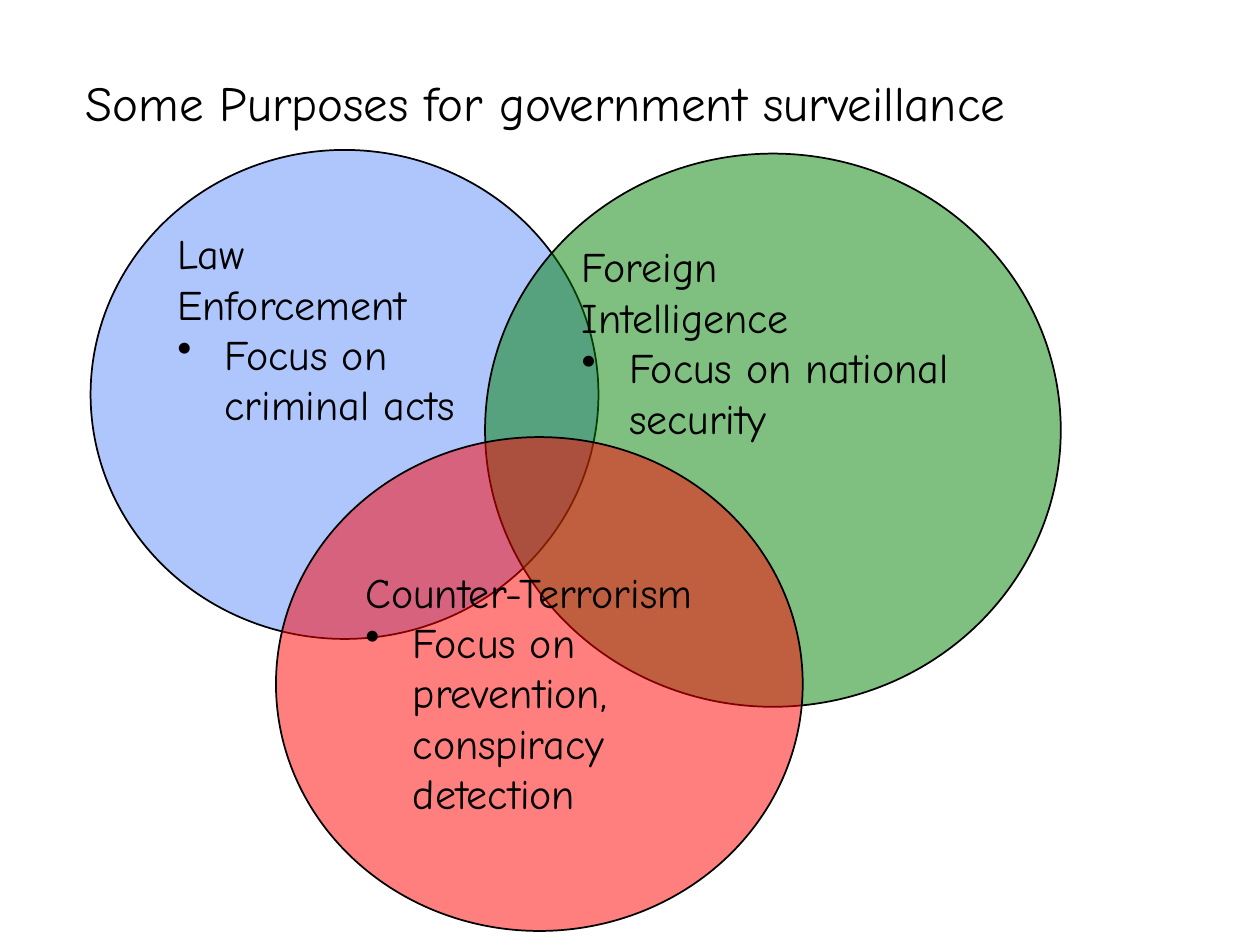
from dataclasses import dataclass

from lxml.etree import SubElement
from pptx import Presentation
from pptx.dml.color import RGBColor
from pptx.enum.shapes import MSO_SHAPE
from pptx.enum.text import MSO_ANCHOR, PP_ALIGN
from pptx.oxml.ns import qn
from pptx.slide import Slide
from pptx.text.text import _Paragraph
from pptx.util import Pt

BLACK = RGBColor(0x00, 0x00, 0x00)
BLUE = RGBColor(0x61, 0x8F, 0xFD)
GREEN = RGBColor(0x00, 0x80, 0x00)
RED = RGBColor(0xFF, 0x00, 0x00)
FONT = "Comic Neue"
BULLET_INDENT = Pt(27)


@dataclass
class Purpose:
    """One circle of the Venn diagram; lengths in points."""
    heading: list[str]
    focus: str
    color: RGBColor
    left: float
    top: float
    width: float
    height: float
    top_inset: float = 3.6


PURPOSES = [
    Purpose(["Law", "Enforcement"], "Focus on criminal acts",
            BLUE, 51.8, 85.7, 290.2, 279.4),
    Purpose(["Foreign", "Intelligence"], "Focus on national security",
            GREEN, 277.2, 87.8, 329, 316.1),
    Purpose(["Counter-Terrorism"], "Focus on prevention, conspiracy detection",
            RED, 157.7, 249.8, 301, 282.2, top_inset=32.4),
]


def style_text(paragraph: _Paragraph, size: float) -> None:
    paragraph.alignment = PP_ALIGN.LEFT
    paragraph.font.name = FONT
    paragraph.font.size = Pt(size)
    paragraph.font.color.rgb = BLACK


def add_bullet(paragraph: _Paragraph) -> None:
    properties = paragraph._p.get_or_add_pPr()
    properties.set("marL", str(BULLET_INDENT))
    properties.set("indent", str(-BULLET_INDENT))
    bullet = properties.makeelement(qn("a:buChar"), {"char": "•"})
    # The bullet has to come before the default run properties
    properties.find(qn("a:defRPr")).addprevious(bullet)


def add_purpose(slide: Slide, purpose: Purpose) -> None:
    circle = slide.shapes.add_shape(
        MSO_SHAPE.OVAL, Pt(purpose.left), Pt(purpose.top),
        Pt(purpose.width), Pt(purpose.height))
    circle.shadow.inherit = False
    circle.line.color.rgb = BLACK
    circle.line.width = Pt(1)

    # Half-transparent fill, so that the overlaps show
    circle.fill.solid()
    circle.fill.fore_color.rgb = purpose.color
    color = circle.fill._xPr.find(qn("a:solidFill")).find(qn("a:srgbClr"))
    SubElement(color, qn("a:alpha"), val="50000")

    # Heading lines, then the bulleted focus
    frame = circle.text_frame
    frame.word_wrap = True
    frame.vertical_anchor = MSO_ANCHOR.TOP
    frame.margin_top = Pt(purpose.top_inset)
    frame.text = "\n".join([*purpose.heading, purpose.focus])
    for paragraph in frame.paragraphs:
        style_text(paragraph, 24)
    add_bullet(frame.paragraphs[-1])


def add_title(slide: Slide, text: str) -> None:
    title = slide.shapes.title
    title.left, title.top = Pt(41.8), Pt(25.2)
    title.width, title.height = Pt(612), Pt(66.2)
    title.text_frame.text = text
    title.text_frame.vertical_anchor = MSO_ANCHOR.MIDDLE
    style_text(title.text_frame.paragraphs[0], 28)


def main() -> None:
    presentation = Presentation()
    presentation.slide_width, presentation.slide_height = Pt(720), Pt(540)
    slide = presentation.slides.add_slide(presentation.slide_layouts[5])
    add_title(slide, "Some Purposes for government surveillance")
    for purpose in PURPOSES:
        add_purpose(slide, purpose)
    presentation.save("out.pptx")


if __name__ == "__main__":
    main()
